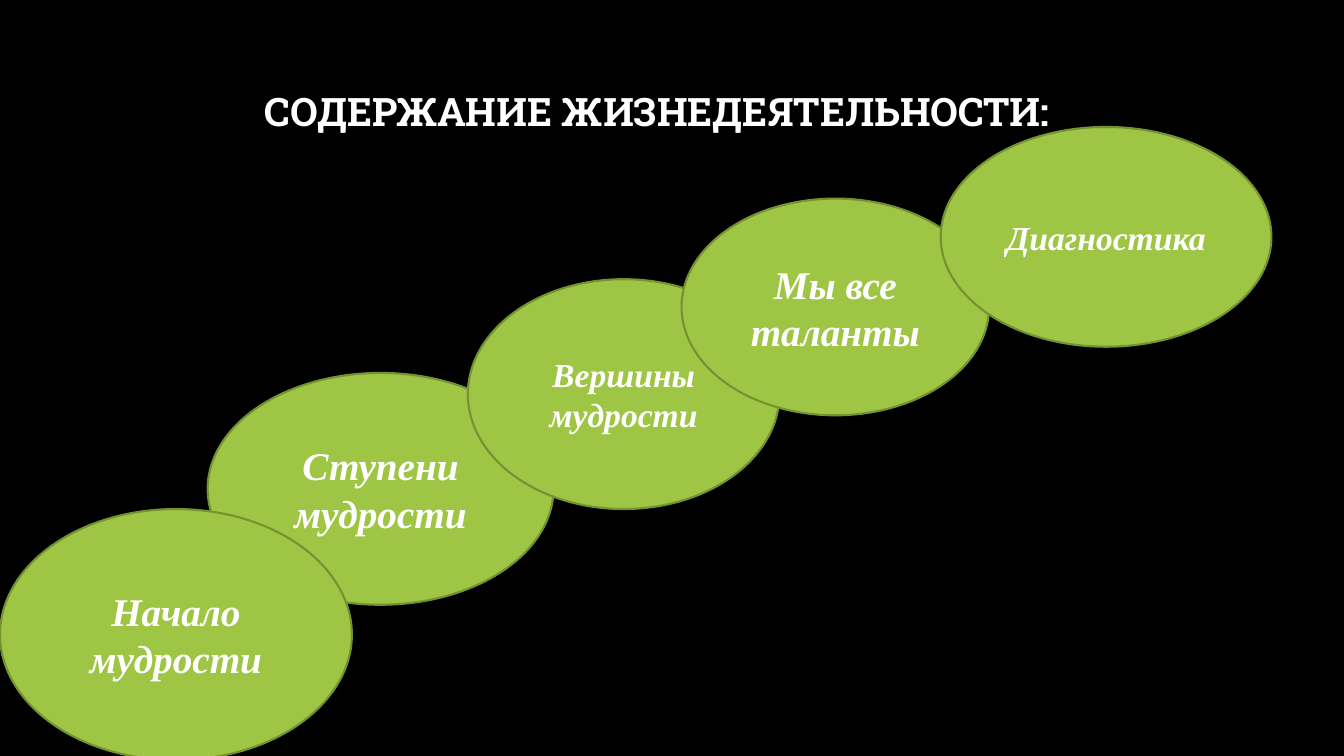
from pptx import Presentation
from pptx.dml.color import RGBColor
from pptx.enum.shapes import MSO_SHAPE as Shape
from pptx.enum.text import MSO_ANCHOR as Anchor, PP_ALIGN as Align
from pptx.util import Inches, Pt

BLACK = RGBColor(0x00, 0x00, 0x00)
WHITE = RGBColor(0xFF, 0xFF, 0xFF)
GREEN = RGBColor(0x9E, 0xC5, 0x44)
DARK_GREEN = RGBColor(0x75, 0x92, 0x32)

# Content: stages from back to front as text, size, (left, top, width, height)
TITLE = "СОДЕРЖАНИЕ ЖИЗНЕДЕЯТЕЛЬНОСТИ:"
TITLE_BOX = (0.45, 0.78, 12.13, 0.7)
STAGES = [
    ("Ступени мудрости", 28, (2.06, 3.7, 3.43, 2.3)),
    ("Вершины мудрости", 24, (4.64, 2.77, 3.09, 2.28)),
    ("Мы все таланты", 28, (6.76, 1.97, 3.05, 2.15)),
    ("Начало мудрости", 28, (0, 5.05, 3.49, 2.49)),
    ("Диагностика", 24, (9.33, 1.26, 3.28, 2.18)),
]


def write(shape, text, size, font, italic=False, spacing=1.0):
    frame = shape.text_frame
    frame.word_wrap = True
    frame.vertical_anchor = Anchor.MIDDLE
    para = frame.paragraphs[0]
    para.alignment = Align.CENTER
    para.line_spacing = spacing
    span = para.add_run()
    span.text = text
    span.font.name = font
    span.font.size = Pt(size)
    span.font.bold = True
    span.font.italic = italic
    span.font.color.rgb = WHITE


def add_stage(page, text, size, box):
    oval = page.shapes.add_shape(Shape.OVAL, *map(Inches, box))
    oval.shadow.inherit = False
    oval.fill.solid()
    oval.fill.fore_color.rgb = GREEN
    oval.line.color.rgb = DARK_GREEN
    oval.line.width = Pt(1.5)
    write(oval, text, size, "Times New Roman", italic=True)


def main():
    deck = Presentation()
    deck.slide_width, deck.slide_height = Inches(13.33), Inches(7.5)
    page = deck.slides.add_slide(deck.slide_layouts[5])
    page.background.fill.solid()
    page.background.fill.fore_color.rgb = BLACK

    # Title
    title = page.shapes.title
    title.left, title.top, title.width, title.height = map(Inches, TITLE_BOX)
    write(title, TITLE, 28, "Roboto Slab", spacing=0.9)

    # Rising chain of stages
    for text, size, box in STAGES:
        add_stage(page, text, size, box)

    deck.save("out.pptx")


if __name__ == "__main__":
    main()
